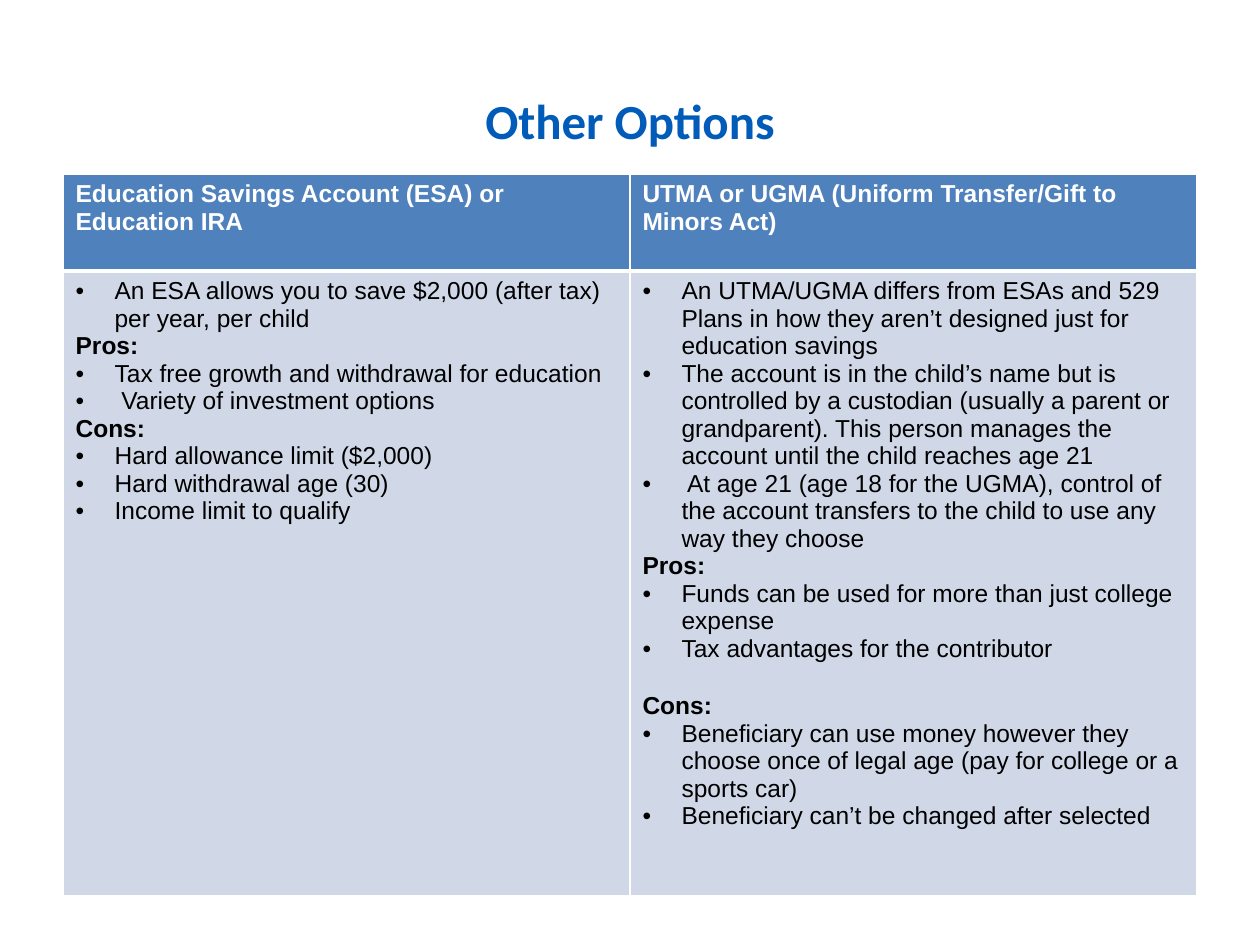
import pptx
import pptx.util
import pptx.dml.color
import pptx.enum.text
import pptx.oxml
import pptx.oxml.ns

SCALE = 914400 // 126
INDENT = 39
WHITE, BLACK = "FFFFFF", "000000"
TITLE, HEAD, BODY = "005CB8", "4F81BD", "D0D8E8"

# Each column: heading, then (label, points) groups
COLS = [
    ("Education Savings Account (ESA) or Education IRA", [
        (None, ["An ESA allows you to save $2,000 (after tax) per year, per child"]),
        ("Pros:", ["Tax free growth and withdrawal for education",
                   " Variety of investment options"]),
        ("Cons:", ["Hard allowance limit ($2,000)",
                   "Hard withdrawal age (30)",
                   "Income limit to qualify"]),
    ]),
    ("UTMA or UGMA (Uniform Transfer/Gift to Minors Act)", [
        (None, ["An UTMA/UGMA differs from ESAs and 529 Plans in how they aren’t "
                "designed just for education savings",
                "The account is in the child’s name but is controlled by a custodian "
                "(usually a parent or grandparent). This person manages the account "
                "until the child reaches age 21",
                " At age 21 (age 18 for the UGMA), control of the account transfers "
                "to the child to use any way they choose"]),
        ("Pros:", ["Funds can be used for more than just college expense",
                   "Tax advantages for the contributor"]),
        ("Cons:", ["Beneficiary can use money however they choose once of legal age "
                   "(pay for college or a sports car)",
                   "Beneficiary can’t be changed after selected"]),
    ]),
]
GAPS = {(1, "Cons:"): 17}  # extra points above a label, by column


def px(num):
    return pptx.util.Emu(num * SCALE)


def color(hex_code):
    return pptx.dml.color.RGBColor.from_string(hex_code)


def node(tag, **attrs):
    elem = pptx.oxml.parse_xml(f"<a:{tag} {pptx.oxml.ns.nsdecls('a')}/>")
    for key, val in attrs.items():
        elem.set(key, str(val))
    return elem


def write(frame, text, size=14, font="Arial", ink=BLACK, bold=False,
          bullet=False, gap=0, line=None, align=None):
    """Fill the first paragraph if it is empty, otherwise add one."""
    para = frame.paragraphs[0]
    if para.runs:
        para = frame.add_paragraph()
    if gap:
        para.space_before = pptx.util.Pt(gap)
    if line:
        para.line_spacing = pptx.util.Pt(line)
    if align is not None:
        para.alignment = align
    if bullet:
        props = para._p.get_or_add_pPr()
        props.set("marL", str(px(INDENT)))
        props.set("indent", str(-px(INDENT)))
        props.append(node("buFont", typeface="Arial"))
        props.append(node("buChar", char="•"))
    run = para.add_run()
    run.text = text
    run.font.size = pptx.util.Pt(size)
    run.font.name = font
    run.font.bold = bold
    run.font.color.rgb = color(ink)


def paint(cell, fill, top=1, base=1):
    """Set the cell's fill and its white borders, widths in points."""
    cell.fill.solid()
    cell.fill.fore_color.rgb = color(fill)
    props = cell._tc.get_or_add_tcPr()
    sides = {"lnL": 1, "lnR": 1, "lnT": top, "lnB": base}
    for spot, (tag, width) in enumerate(sides.items()):
        edge = node(tag, w=pptx.util.Pt(width))
        solid = node("solidFill")
        solid.append(node("srgbClr", val=WHITE))
        edge.append(solid)
        props.insert(spot, edge)


def add_title(slide):
    box = slide.shapes.add_textbox(px(63), px(60), px(1134), px(78))
    frame = box.text_frame
    frame.word_wrap = True
    frame.vertical_anchor = pptx.enum.text.MSO_ANCHOR.MIDDLE
    write(frame, "Other Options", size=28, font="Calibri", ink=TITLE, bold=True,
          line=57, align=pptx.enum.text.PP_ALIGN.CENTER)


def add_grid(slide):
    grid = slide.shapes.add_table(2, len(COLS), px(63), px(174),
                                  px(1134), px(722)).table
    for row, high in zip(grid.rows, (97, 625)):
        row.height = px(high)
    for col, (head, groups) in enumerate(COLS):
        grid.columns[col].width = px(1134 // len(COLS))
        # Heading cell
        cell = grid.cell(0, col)
        paint(cell, HEAD, base=3)
        write(cell.text_frame, head, ink=WHITE, bold=True)
        # Body cell
        cell = grid.cell(1, col)
        paint(cell, BODY, top=3)
        for label, points in groups:
            if label:
                write(cell.text_frame, label, bold=True,
                      gap=GAPS.get((col, label), 0))
            for point in points:
                write(cell.text_frame, point, bullet=True)


def main():
    deck = pptx.Presentation()
    deck.slide_width, deck.slide_height = px(1260), px(945)
    slide = deck.slides.add_slide(deck.slide_layouts[6])
    add_title(slide)
    add_grid(slide)
    deck.save("out.pptx")


if __name__ == "__main__":
    main()
